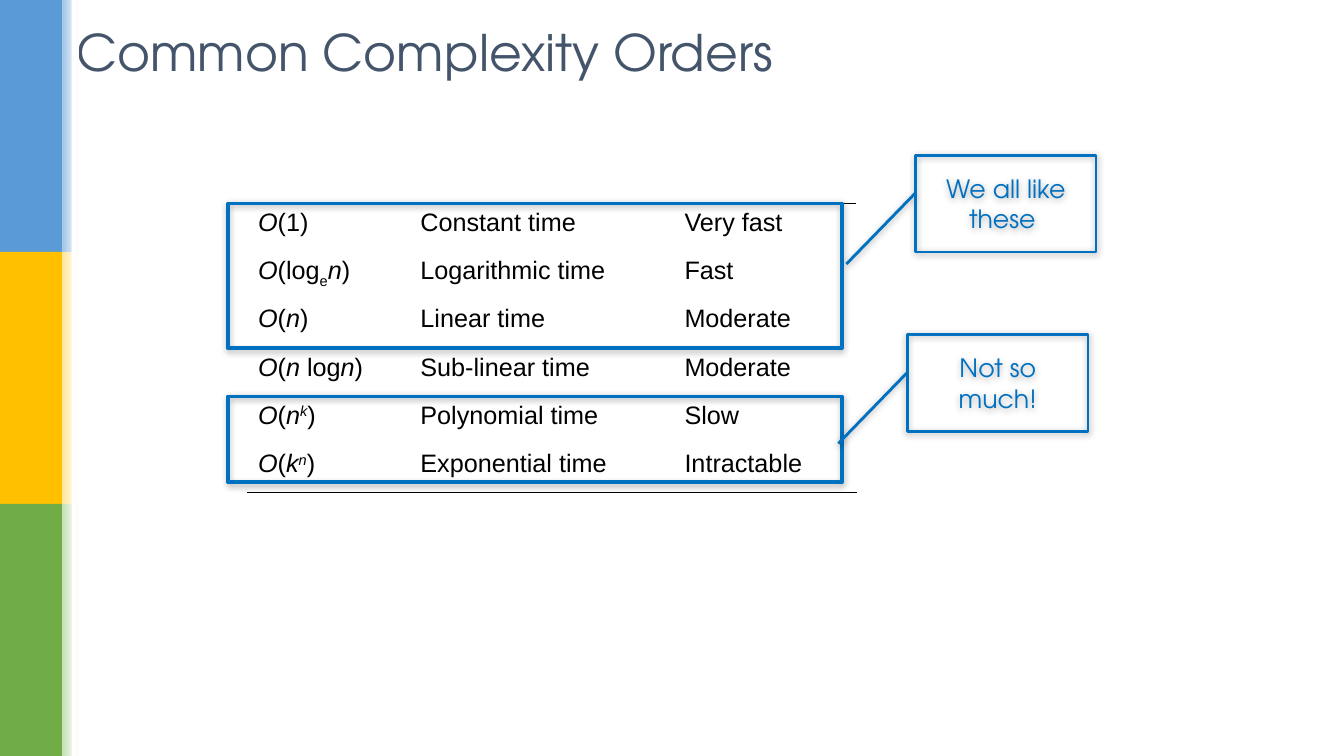
import dataclasses

import pptx
import pptx.dml.color
import pptx.enum.shapes
import pptx.enum.text
import pptx.oxml
import pptx.oxml.ns
import pptx.util

SHAPES = pptx.enum.shapes.MSO_SHAPE
ALIGN = pptx.enum.text.PP_ALIGN
MIDDLE = pptx.enum.text.MSO_ANCHOR.MIDDLE
WIDTH, HEIGHT = pptx.util.Inches(13.33), pptx.util.Inches(7.5)


@dataclasses.dataclass(frozen=True)
class Theme:
    heading_font: str = "TeX Gyre Adventor"
    table_font: str = "Arial"
    title_size: int = 36
    text_size: int = 18
    title: str = "44546A"
    text: str = "000000"
    accent: str = "0070C0"
    paper: str = "FFFFFF"
    # Sidebar bands from top to bottom: solid colour, pale edge colour
    bands: tuple = (("5B9BD5", "9DC3E6"), ("FFC000", "FFE699"), ("70AD47", "C5E0B4"))


THEME = Theme()

# Table grid, in percent of the slide's width (columns) and height (rows)
TABLE_LEFT, TABLE_TOP, ROW = 18.45, 26.93, 6.38
COLUMNS = (12.08, 19.65, 13.58)

# Each formula is a list of runs: text, italic, baseline shift in percent
ORDER = ("O", True, 0)
OPEN, CLOSE = ("(", False, 0), (")", False, 0)
N = ("n", True, 0)
ORDERS = (
    ([ORDER, ("(1)", False, 0)], "Constant time", "Very fast"),
    ([ORDER, ("(log", False, 0), ("e", False, -25), N, CLOSE], "Logarithmic time", "Fast"),
    ([ORDER, OPEN, N, CLOSE], "Linear time", "Moderate"),
    ([ORDER, OPEN, N, (" log", False, 0), N, CLOSE], "Sub-linear time", "Moderate"),
    ([ORDER, OPEN, N, ("k", True, 30), CLOSE], "Polynomial time", "Slow"),
    ([ORDER, OPEN, ("k", True, 0), ("n", True, 30), CLOSE], "Exponential time", "Intractable"),
)


def color(value):
    return pptx.dml.color.RGBColor.from_string(value)


def box(left, top, width, height):
    """Turn percentages of the slide into lengths."""
    return (int(WIDTH * left / 100), int(HEIGHT * top / 100),
            int(WIDTH * width / 100), int(HEIGHT * height / 100))


def add_run(paragraph, text, font, size, ink, italic=False, baseline=0):
    run = paragraph.add_run()
    run.text = text
    run.font.name = font
    run.font.size = pptx.util.Pt(size)
    run.font.color.rgb = color(ink)
    run.font.italic = italic
    if baseline:
        run._r.get_or_add_rPr().set("baseline", str(baseline * 1000))


def add_bar(slide, place, fill, fade_to=None):
    bar = slide.shapes.add_shape(SHAPES.RECTANGLE, *box(*place))
    bar.shadow.inherit = False
    bar.line.fill.background()
    if fade_to is None:
        bar.fill.solid()
        bar.fill.fore_color.rgb = color(fill)
        return
    bar.fill.gradient()
    bar.fill.gradient_angle = 0
    for stop, value in zip(bar.fill.gradient_stops, (fill, fade_to)):
        stop.color.rgb = color(value)


def add_sidebar(slide):
    band = 100 / len(THEME.bands)
    for index, (solid, pale) in enumerate(THEME.bands):
        add_bar(slide, (0, index * band, 4.65, band), solid)
        add_bar(slide, (4.65, index * band, 1.2, band), pale, THEME.paper)
    add_bar(slide, (5.33, 0, 0.38, 100), THEME.paper)


def add_title(slide, text):
    title = slide.shapes.title
    title.left, title.top, title.width, title.height = box(4.95, 0, 93.92, 13.47)
    frame = title.text_frame
    frame.auto_size = pptx.enum.text.MSO_AUTO_SIZE.NONE
    frame.vertical_anchor = MIDDLE
    paragraph = frame.paragraphs[0]
    paragraph.alignment = ALIGN.LEFT
    add_run(paragraph, text, THEME.heading_font, THEME.title_size, THEME.title)


def add_rule(cell, side):
    """Draw a thin line on the top (T) or bottom (B) side of a cell."""
    cell._tc.get_or_add_tcPr().insert(0, pptx.oxml.parse_xml(
        f'<a:ln{side} {pptx.oxml.ns.nsdecls("a")} w="12700"><a:solidFill>'
        f'<a:srgbClr val="{THEME.text}"/></a:solidFill></a:ln{side}>'))


def add_orders_table(slide):
    place = box(TABLE_LEFT, TABLE_TOP, sum(COLUMNS), ROW * len(ORDERS))
    table = slide.shapes.add_table(len(ORDERS), len(COLUMNS), *place).table
    table.first_row = table.horz_banding = False
    for column, share in zip(table.columns, COLUMNS):
        column.width = int(WIDTH * share / 100)
    for row_index, (formula, name, speed) in enumerate(ORDERS):
        table.rows[row_index].height = int(HEIGHT * ROW / 100)
        contents = (formula, [(name, False, 0)], [(speed, False, 0)])
        for column_index, runs in enumerate(contents):
            cell = table.cell(row_index, column_index)
            cell.fill.background()
            paragraph = cell.text_frame.paragraphs[0]
            paragraph.space_after = pptx.util.Pt(0.35 * THEME.text_size)
            for text, italic, baseline in runs:
                add_run(paragraph, text, THEME.table_font, THEME.text_size,
                        THEME.text, italic, baseline)
            if row_index == 0:
                add_rule(cell, "T")
            elif row_index == len(ORDERS) - 1:
                add_rule(cell, "B")


def add_outline(slide, kind, place, line_width):
    """Add an unfilled shape with an accent line and a soft shadow."""
    shape = slide.shapes.add_shape(kind, *box(*place))
    shape.fill.background()
    shape.line.color.rgb = color(THEME.accent)
    shape.line.width = pptx.util.Pt(line_width)
    shape.shadow.inherit = False
    effects = shape._element.spPr.find(pptx.oxml.ns.qn("a:effectLst"))
    effects.append(pptx.oxml.parse_xml(
        f'<a:outerShdw {pptx.oxml.ns.nsdecls("a")} blurRad="63500" dist="12700" '
        f'dir="5400000" rotWithShape="0"><a:srgbClr val="{THEME.text}">'
        '<a:alpha val="32000"/></a:srgbClr></a:outerShdw>'))
    return shape


def add_row_frame(slide, first_row, row_count, trim=0):
    place = (16.95, TABLE_TOP + first_row * ROW, 45.69, row_count * ROW - trim)
    add_outline(slide, SHAPES.RECTANGLE, place, 2.5)


def add_callout(slide, left, top, text):
    callout = add_outline(slide, SHAPES.LINE_CALLOUT_1, (left, top, 13.43, 12.8), 2)
    for index, value in enumerate((0.39, 0, 1.125, -0.383)):
        callout.adjustments[index] = value
    frame = callout.text_frame
    frame.word_wrap = True
    frame.vertical_anchor = MIDDLE
    paragraph = frame.paragraphs[0]
    paragraph.alignment = ALIGN.CENTER
    add_run(paragraph, text, THEME.heading_font, THEME.text_size, THEME.accent)


def main():
    presentation = pptx.Presentation()
    presentation.slide_width, presentation.slide_height = WIDTH, HEIGHT
    slide = presentation.slides.add_slide(presentation.slide_layouts[5])

    # Page furniture
    add_sidebar(slide)
    add_title(slide, "Common Complexity Orders")

    # Table with the good and the bad rows framed
    add_orders_table(slide)
    add_row_frame(slide, first_row=0, row_count=3)
    add_row_frame(slide, first_row=4, row_count=2, trim=1.43)

    # Remarks on the framed rows
    add_callout(slide, 68.12, 20.53, "We all like these ")
    add_callout(slide, 67.52, 44.27, "Not so much!")

    presentation.save("out.pptx")


if __name__ == "__main__":
    main()
